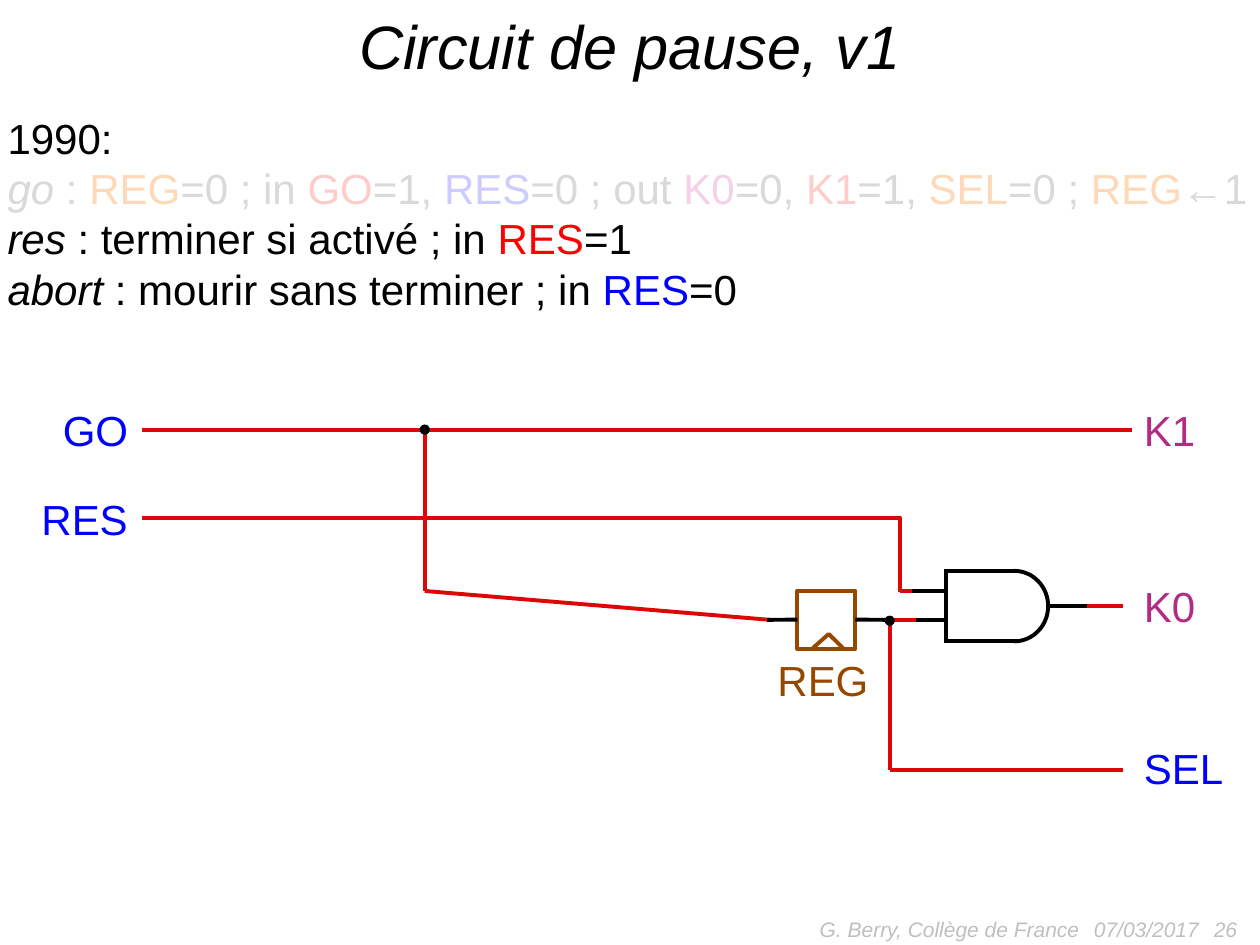
from math import cos, pi, sin

from lxml import etree
from pptx import Presentation
from pptx.dml.color import RGBColor
from pptx.enum import shapes as kinds, text as txt
from pptx.oxml.ns import qn
from pptx.util import Pt

RED, BLACK, BLUE, PLUM, BROWN = "DD0806", "000000", "0000FF", "B22C85", "964700"
GREY, PEACH, PINK, LILAC, ROSE = "D9D9D9", "FFD9B7", "FFCCCC", "CCCCFF", "F4D1E8"
ALIGN, ANCHOR = txt.PP_ALIGN, txt.MSO_ANCHOR
WIDTH = 2.25


def hue(code):
    return RGBColor.from_string(code)


def put(obj, vals):
    for name, val in vals.items():
        setattr(obj, name, val)


def place(shape, box):
    put(shape, dict(zip(("left", "top", "width", "height"), map(Pt, box))))


def write(par, runs, size):
    for words, color, slant in runs:
        run = par.add_run()
        run.text = words
        put(run.font, {"name": "Arial", "size": Pt(size), "italic": slant})
        run.font.color.rgb = hue(color)


def label(slide, box, words, color, size=24, slant=False, align=ALIGN.LEFT):
    frame = slide.shapes.add_textbox(*map(Pt, box)).text_frame
    put(frame, {"word_wrap": False, "vertical_anchor": ANCHOR.MIDDLE})
    par = frame.paragraphs[0]
    par.alignment = align
    write(par, [(words, color, slant)], size)


def ink(shape, line=None, fill=None):
    shape.shadow.inherit = False
    if fill:
        shape.fill.solid()
        shape.fill.fore_color.rgb = hue(fill)
    else:
        shape.fill.background()
    if line:
        shape.line.color.rgb = hue(line)
        shape.line.width = Pt(WIDTH)
    else:
        shape.line.fill.background()


def wire(slide, color, x1, y1, x2, y2):
    conn = slide.shapes.add_connector(
        kinds.MSO_CONNECTOR.STRAIGHT, *map(Pt, (x1, y1, x2, y2)))
    conn.line.color.rgb = hue(color)
    conn.line.width = Pt(WIDTH)
    etree.SubElement(conn._element.spPr, qn("a:effectLst"))
    return conn


def bend(slide, color, *pts):
    pts = [(Pt(x), Pt(y)) for x, y in pts]
    path = slide.shapes.build_freeform(*pts[0])
    path.add_line_segments(pts[1:], close=False)
    ink(path.convert_to_shape(), color)


def dot(slide, x, y, size=5.8):
    mark = slide.shapes.add_shape(
        kinds.MSO_SHAPE.OVAL, *map(Pt, (x - size / 2, y - size / 2, size, size)))
    ink(mark, fill=BLACK)


def head(slide, box):
    title = slide.shapes.title
    place(title, box)
    title.text_frame.vertical_anchor = ANCHOR.MIDDLE
    par = title.text_frame.paragraphs[0]
    par.alignment = ALIGN.CENTER
    write(par, [("Circuit de pause, v1", BLACK, True)], 35)


def notes(slide, box, rows):
    body = slide.placeholders[1]
    place(body, box)
    frame = body.text_frame
    put(frame, {"word_wrap": True, "vertical_anchor": ANCHOR.TOP})
    for i, runs in enumerate(rows):
        par = frame.add_paragraph() if i else frame.paragraphs[0]
        put(par, {"space_before": Pt(0), "line_spacing": 1.0, "alignment": ALIGN.LEFT})
        props = par._p.get_or_add_pPr()
        props.set("marL", "0")
        props.set("indent", "0")
        etree.SubElement(props, qn("a:buNone"))
        write(par, runs, 24)


def register(slide, x, y, side):
    box = slide.shapes.add_shape(
        kinds.MSO_SHAPE.RECTANGLE, *map(Pt, (x, y, side, side)))
    ink(box, BROWN)
    mid, foot = x + side / 2 + 1.4, y + side - 0.4
    bend(slide, BROWN, (mid - 9, foot), (mid, foot - 8), (mid + 8, foot))
    return box


def gate(slide, x, y, w, h, rx, steps=16):
    flat, ry = x + w - rx, h / 2
    wire(slide, BLACK, x, y, x, y + h)
    for edge, side in ((y, -1), (y + h, 1)):
        wire(slide, BLACK, x - 1, edge, flat + 2, edge)
        turns = [pi / 2 * i / steps for i in range(steps + 1)]
        bend(slide, BLACK, *[(flat + rx * sin(t), y + ry + side * ry * cos(t))
                             for t in turns])


def circuit(slide, left, top):
    def at(*pts):
        return [(left + x, top + y) for x, y in pts]

    def link(color, *ends):
        (x1, y1), (x2, y2) = at(*ends)
        return wire(slide, color, x1, y1, x2, y2)

    def span(color, x1, x2, y):
        return link(color, (x1, y), (x2, y))

    tap, fork, end = 161.3, 427, 560.1
    res, pin, mid, out, sel = 50.4, 92.2, 108.7, 100.8, 194.4

    # Red signals
    span(RED, 0, 565.2, 0)
    link(RED, (tap, 0), (tap, pin))
    link(RED, (tap, pin), (358.5, mid))
    bend(slide, RED, *at((0, res), (433, res), (433, pin + 0.5)))
    span(RED, 433, 441, pin)
    link(RED, (fork, mid), (fork, sel))
    span(RED, fork, end, sel)
    span(RED, 425.5, 442, mid)
    span(RED, 535, end, out)

    # Register and gate with their black leads
    reg = register(slide, left + 374.2, top + 92, 33.2)
    span(BLACK, 357, 374.2, mid).end_connect(reg, 1)
    span(BLACK, 407.4, fork, mid).begin_connect(reg, 3)
    span(BLACK, 440, 458, pin)
    span(BLACK, 442, 458, mid)
    gate(slide, left + 459.3, top + 80.7, 58.3, 40.3, 19.4)
    span(BLACK, 518, 540, out)

    # Junctions
    dot(slide, left + tap, top)
    dot(slide, left + fork, top + mid + 0.5)

    # Signal names
    for words, color, x, y, w in (
            ("GO", BLUE, -52.6, -18, 52), ("RES", BLUE, -64.8, 33.1, 64),
            ("K1", PLUM, 565.2, -18, 44), ("K0", PLUM, 565.2, 82.8, 44),
            ("SEL", BLUE, 565.2, 175.4, 60), ("REG", BROWN, 355.8, 124.8, 67)):
        label(slide, (left + x, top + y, w, 36), words, color)


def foot(slide, top):
    for words, x, w, align in (
            ("G. Berry, Collège de France", 396, 228, ALIGN.RIGHT),
            ("07/03/2017", 618, 168, ALIGN.LEFT),
            ("26", 546, 168, ALIGN.RIGHT)):
        label(slide, (x, top, w, 28.8), words, "BFBFBF", 12, True, align)


ROWS = [
    [("1990:", BLACK, False)],
    [("go", GREY, True)] + [(words, color, False) for words, color in (
        (" : ", GREY), ("REG", PEACH), ("=0 ; in ", GREY), ("GO", PINK),
        ("=1, ", GREY), ("RES", LILAC), ("=0 ; out ", GREY), ("K0", ROSE),
        ("=0, ", GREY), ("K1", PINK), ("=1, ", GREY), ("SEL", PEACH),
        ("=0 ; ", GREY), ("REG", PEACH), ("←1", GREY))],
    [("res", BLACK, True), (" : terminer si activé ; in ", BLACK, False),
     ("RES", "FF0000", False), ("=1", BLACK, False)],
    [("abort ", BLACK, True), (": mourir sans terminer ; in ", BLACK, False),
     ("RES", BLUE, False), ("=0", BLACK, False)],
]


def main():
    deck = Presentation()
    put(deck, {"slide_width": Pt(720), "slide_height": Pt(540)})
    slide = deck.slides.add_slide(deck.slide_layouts[1])
    head(slide, (9, 1, 702, 49.7))
    notes(slide, (-2.9, 60.5, 729.4, 123.8), ROWS)
    circuit(slide, 81.4, 245.5)
    foot(slide, 516.6)
    deck.save("out.pptx")


if __name__ == "__main__":
    main()
